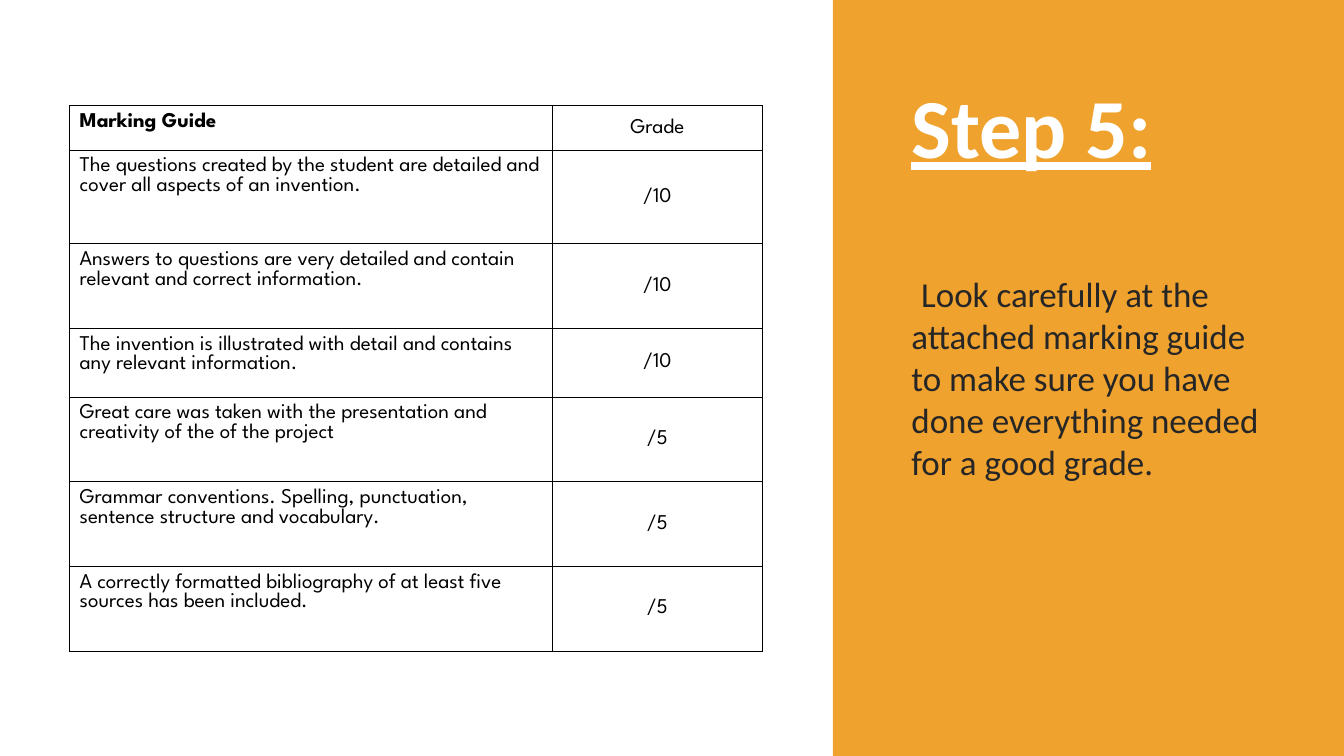
from lxml import etree
from pptx import Presentation
from pptx.dml.color import RGBColor
from pptx.enum.shapes import MSO_SHAPE
from pptx.enum.text import MSO_ANCHOR, MSO_AUTO_SIZE, PP_ALIGN
from pptx.oxml.ns import qn
from pptx.util import Inches, Pt

RECTANGLE = MSO_SHAPE.RECTANGLE
TOP, MIDDLE, BOTTOM = MSO_ANCHOR.TOP, MSO_ANCHOR.MIDDLE, MSO_ANCHOR.BOTTOM
LEFT, CENTER = PP_ALIGN.LEFT, PP_ALIGN.CENTER
NO_AUTOFIT = MSO_AUTO_SIZE.NONE

ORANGE, WHITE, BLACK, CHARCOAL = "F0A22E", "FFFFFF", "000000", "262626"
BODY_FONT, TABLE_FONT = "Calibri", "League Spartan"

CRITERIA = [
    ("Marking Guide", "Grade", 0.44),
    ("The questions created by the student are detailed and cover all aspects of an invention.", "/10", 0.93),
    ("Answers to questions are very detailed and contain relevant and correct information.", "/10", 0.84),
    ("The invention is illustrated with detail and contains any relevant information.", "/10", 0.68),
    ("Great care was taken with the presentation and creativity of the of the project", "/5", 0.84),
    ("Grammar conventions. Spelling, punctuation, sentence structure and vocabulary.", "/5", 0.84),
    ("A correctly formatted bibliography of at least five sources has been included.", "/5", 0.84),
]
COLUMN_SHARES = (0.697, 0.303)


def color(hex_value):
    return RGBColor.from_string(hex_value)


def write(frame, text, font, size, hex_color, align=LEFT, bold=False, underline=False):
    """Put one formatted paragraph in the frame and return the paragraph."""
    frame.text = text
    paragraph = frame.paragraphs[0]
    paragraph.alignment = align
    paragraph.space_before = Pt(0)
    style = paragraph.runs[0].font
    style.name, style.size, style.bold = font, Pt(size), bold
    style.underline = underline
    style.color.rgb = color(hex_color)
    return paragraph


def place(placeholder, left, top, width, height, anchor):
    placeholder.left, placeholder.top = Inches(left), Inches(top)
    placeholder.width, placeholder.height = Inches(width), Inches(height)
    frame = placeholder.text_frame
    frame.word_wrap = True
    frame.auto_size = NO_AUTOFIT
    frame.vertical_anchor = anchor
    return frame


def add_blank_bullet(paragraph):
    """Indent the first line with a space as its bullet."""
    properties = paragraph._p.get_or_add_pPr()
    properties.set("marL", "0")
    properties.set("indent", str(Inches(-0.17)))
    etree.SubElement(properties, qn("a:buChar")).set("char", " ")


def add_step_panel(slide, left, top, width, height):
    panel = slide.shapes.add_shape(
        RECTANGLE, Inches(left), Inches(top), Inches(width), Inches(height))
    panel.shadow.inherit = False
    panel.fill.solid()
    panel.fill.fore_color.rgb = color(ORANGE)
    panel.line.fill.background()

    title, instruction = slide.shapes.title, slide.placeholders[1]
    title.element.addprevious(panel.element)
    text_left, text_width = left + 0.68, width - 1.35

    title_frame = place(title, text_left, top + 0.55, text_width, 2.1, BOTTOM)
    title_frame.margin_bottom = Inches(0.91)
    heading = write(title_frame, "Step 5:", BODY_FONT, 60, WHITE, bold=True, underline=True)
    heading.line_spacing = 0.85

    instruction_frame = place(instruction, text_left, top + 2.65, text_width, 3.67, TOP)
    add_blank_bullet(write(
        instruction_frame,
        "Look carefully at the attached marking guide to make sure you have "
        "done everything needed for a good grade.",
        BODY_FONT, 25, CHARCOAL))


def add_borders(cell):
    properties = cell._tc.get_or_add_tcPr()
    for side in ("a:lnL", "a:lnR", "a:lnT", "a:lnB"):
        line = etree.SubElement(properties, qn(side), w=str(Pt(0.75)))
        fill = etree.SubElement(line, qn("a:solidFill"))
        etree.SubElement(fill, qn("a:srgbClr"), val=BLACK)


def fill_cell(cell, text, anchor, align, bold):
    cell.margin_left = cell.margin_right = Inches(0.1)
    cell.margin_top = cell.margin_bottom = Inches(0.07)
    cell.vertical_anchor = anchor
    write(cell.text_frame, text, TABLE_FONT, 15, BLACK, align, bold)
    add_borders(cell)
    cell.fill.background()


def add_marking_guide(slide, left, top, width):
    height = sum(row_height for _, _, row_height in CRITERIA)
    guide = slide.shapes.add_table(
        len(CRITERIA), len(COLUMN_SHARES),
        Inches(left), Inches(top), Inches(width), Inches(height)).table
    guide.first_row = guide.horz_banding = False
    for column, share in zip(guide.columns, COLUMN_SHARES):
        column.width = Inches(width * share)
    for index, (criterion, grade, row_height) in enumerate(CRITERIA):
        guide.rows[index].height = Inches(row_height)
        fill_cell(guide.cell(index, 0), criterion, TOP, LEFT, bold=index == 0)
        fill_cell(guide.cell(index, 1), grade, MIDDLE, CENTER, bold=False)


def main():
    presentation = Presentation()
    presentation.slide_width, presentation.slide_height = Inches(13.33), Inches(7.5)
    slide = presentation.slides.add_slide(presentation.slide_layouts[1])
    slide.background.fill.solid()
    slide.background.fill.fore_color.rgb = color(WHITE)
    add_step_panel(slide, 8.26, 0, 5.07, 7.5)
    add_marking_guide(slide, 0.69, 1.05, 6.87)
    presentation.save("out.pptx")


if __name__ == "__main__":
    main()
